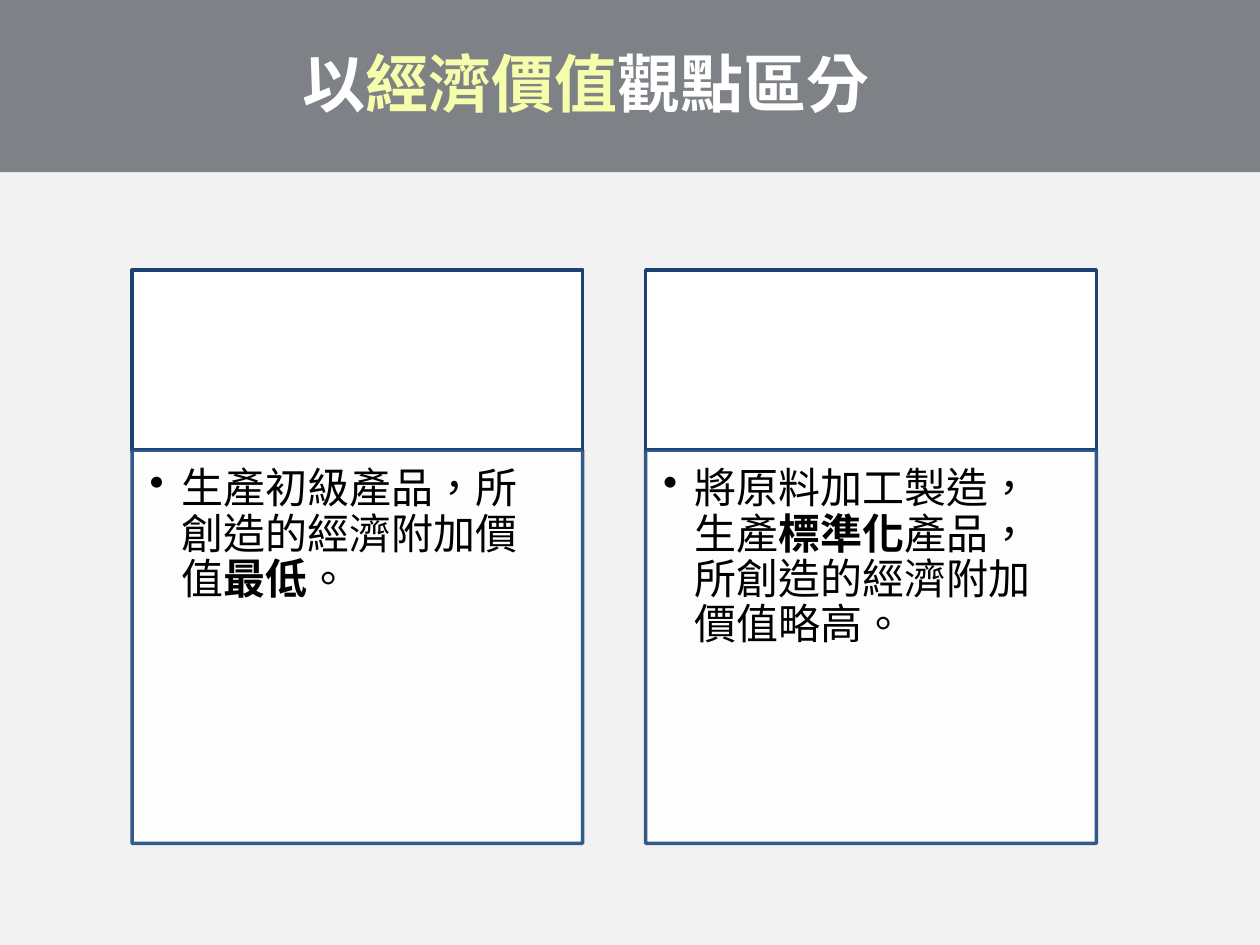
from pptx import Presentation
from pptx.dml.color import RGBColor
from pptx.enum.shapes import MSO_SHAPE
from pptx.enum.text import MSO_ANCHOR, PP_ALIGN
from pptx.oxml.ns import qn
from pptx.util import Pt
from lxml import etree

FONT = "Noto Sans CJK SC"
COLORS = {
    "background": "F2F2F2",
    "band": "0C141C",
    "white": "FFFFFF",
    "highlight": "F6FEAC",
    "header_line": "1C4271",
    "body_line": "1F497D",
    "text": "000000",
}


def add_box(left, top, width, height, fill, line=None, opacity=100):
    """Add a rectangle whose fill and line share one opacity in percent."""
    box = slide.shapes.add_shape(
        MSO_SHAPE.RECTANGLE, Pt(left), Pt(top), Pt(width), Pt(height))
    box.shadow.inherit = False
    box.fill.solid()
    box.fill.fore_color.rgb = RGBColor.from_string(COLORS[fill])
    if line:
        box.line.color.rgb = RGBColor.from_string(COLORS[line])
        box.line.width = Pt(2)
    else:
        box.line.fill.background()
    if opacity < 100:
        for color in box.element.spPr.iter(qn("a:srgbClr")):
            etree.SubElement(color, qn("a:alpha"), val=str(opacity * 1000))
    return box


def add_run(paragraph, text, size, color, bold):
    run = paragraph.add_run()
    run.text = text
    run.font.size = Pt(size)
    run.font.bold = bold
    run.font.color.rgb = RGBColor.from_string(COLORS[color])
    run.font.name = FONT
    run.font._element.set("lang", "zh-TW")
    etree.SubElement(run.font._element, qn("a:ea"), typeface=FONT)


prs = Presentation()
prs.slide_width, prs.slide_height = Pt(720), Pt(540)
slide = prs.slides.add_slide(prs.slide_layouts[6])
slide.background.fill.solid()
slide.background.fill.fore_color.rgb = RGBColor.from_string(COLORS["background"])

# Title band
add_box(0, -2.4, 720, 100.8, "band", opacity=50)
title = slide.shapes.add_textbox(Pt(36.7), Pt(9.4), Pt(596), Pt(62.6)).text_frame
title.word_wrap = True
title.vertical_anchor = MSO_ANCHOR.BOTTOM
title.margin_left = title.margin_right = Pt(6)
title.margin_top = title.margin_bottom = Pt(3)
heading = title.paragraphs[0]
heading.alignment = PP_ALIGN.CENTER
heading.line_spacing = 0.9
for text, color in [("以", "white"), ("經濟價值", "highlight"), ("觀點區分", "white")]:
    add_run(heading, text, 36, color, True)

# Two columns: an empty header above a bulleted description
descriptions = [
    [("生產初級產品，所創造的經濟附加價值", False), ("最低", True), ("。", False)],
    [("將原料加工製造，生產", False), ("標準化", True),
     ("產品，所創造的經濟附加價值略高。", False)],
]
COLUMN_LEFT, COLUMN_WIDTH, COLUMN_STEP = 75.5, 257.5, 293.5
HEADER_TOP, HEADER_HEIGHT, BODY_HEIGHT = 154.2, 103, 224.8

for column, description in enumerate(descriptions):
    left = COLUMN_LEFT + column * COLUMN_STEP
    add_box(left, HEADER_TOP, COLUMN_WIDTH, HEADER_HEIGHT, "white", "header_line")
    body = add_box(left, HEADER_TOP + HEADER_HEIGHT, COLUMN_WIDTH, BODY_HEIGHT,
                   "white", "body_line", opacity=90).text_frame
    body.word_wrap = True
    body.vertical_anchor = MSO_ANCHOR.TOP
    body.margin_left = body.margin_top = Pt(10)
    body.margin_right, body.margin_bottom = Pt(14.5), Pt(15)

    bullet = body.paragraphs[0]
    bullet.alignment = PP_ALIGN.LEFT
    bullet.level = 1
    bullet.line_spacing = 0.9
    bullet.space_after = Pt(3.6)
    properties = bullet._p.get_or_add_pPr()
    properties.set("marL", str(Pt(18)))
    properties.set("indent", str(Pt(-18)))
    etree.SubElement(properties, qn("a:buChar"), char="•")
    for text, bold in description:
        add_run(bullet, text, 24, "text", bold)

prs.save("out.pptx")
